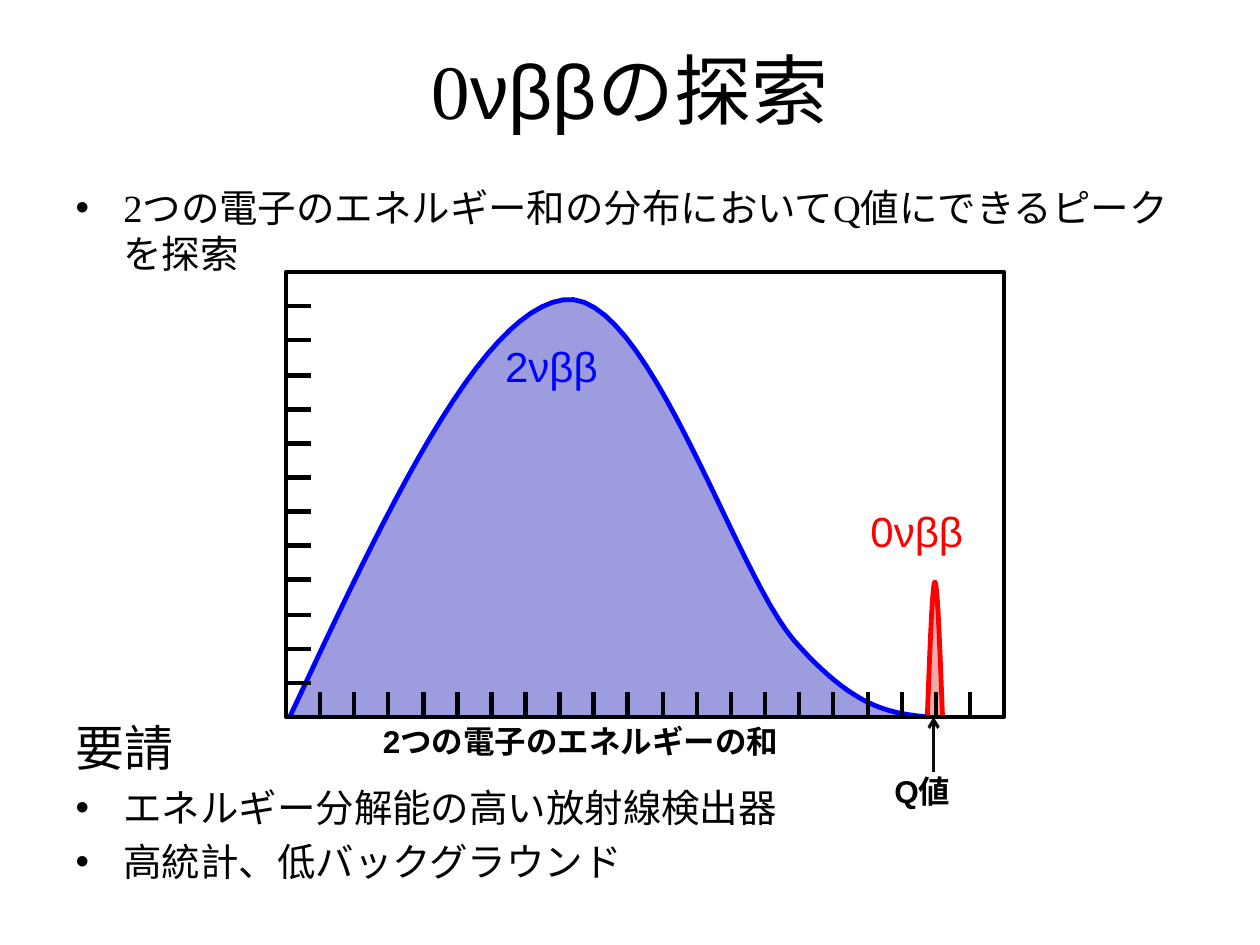
import pptx
import pptx.util
import pptx.dml.color
import pptx.enum.shapes
import pptx.enum.text
import pptx.oxml
import pptx.oxml.ns

PX = 9144  # 100 px to the inch
LEFT, TOP, WIDE, HIGH = 227, 216, 570, 353  # plot frame
BASE = TOP + HIGH
GAP, TICK = 27.15, 20
SERIF, SANS = "Times New Roman", "Arial"
BLACK, BLUE, RED = "000000", "0000FF", "FF0000"


def px(*nums):
    return [pptx.util.Emu(round(n) * PX) for n in nums]


def color(code):
    return pptx.dml.color.RGBColor.from_string(code)


def add_node(parent, tag, **attrs):
    node = pptx.oxml.parse_xml(f"<a:{tag} {pptx.oxml.ns.nsdecls('a')}/>")
    for key, value in attrs.items():
        node.set(key, value)
    parent.append(node)


def set_line(shape, code, width):
    shape.line.color.rgb = color(code)
    shape.line.width = pptx.util.Pt(width)


def add_run(para, text, size, face, code=BLACK, bold=False):
    run = para.add_run()
    run.text = text
    font = run.font
    font.size, font.name, font.bold = pptx.util.Pt(size), face, bold
    font.color.rgb = color(code)


def place(shape, *box):
    shape.left, shape.top, shape.width, shape.height = px(*box)


def fill_title(title):
    place(title, 50, 8, 900, 125)
    frame = title.text_frame
    frame.vertical_anchor = pptx.enum.text.MSO_ANCHOR.MIDDLE
    para = frame.paragraphs[0]
    para.alignment = pptx.enum.text.PP_ALIGN.CENTER
    for text, face in (("0", SERIF), ("νββ", SANS), ("の探索", SERIF)):
        add_run(para, text, 44, face)


def fill_body(body):
    place(body, 50, 141, 900, 552)
    frame = body.text_frame
    frame.auto_size = pptx.enum.text.MSO_AUTO_SIZE.NONE
    items = (
        ("2つの電子のエネルギー和の分布においてQ値にできるピークを探索", 22, 0, True),
        ("要請", 28, 252, False),
        ("エネルギー分解能の高い放射線検出器", 22, 4.4, True),
        ("高統計、低バックグラウンド", 22, 4.4, True),
    )
    for num, (text, size, before, dot) in enumerate(items):
        para = frame.add_paragraph() if num else frame.paragraphs[0]
        para.space_before = pptx.util.Pt(before)
        props = para._p.get_or_add_pPr()
        indent = px(38)[0]
        props.set("marL", str(indent))
        props.set("indent", str(-indent))
        if dot:
            add_node(props, "buFont", typeface=SANS)
            add_node(props, "buChar", char="•")
        else:
            add_node(props, "buNone")
        add_run(para, text, size, SERIF)


def add_label(group, text, box, size, code=BLACK, bold=False):
    label = group.shapes.add_textbox(*px(*box))
    frame = label.text_frame
    frame.word_wrap = True
    add_run(frame.paragraphs[0], text, size, SANS, code, bold)


def add_curve(group, start, arcs, fill, code, steps=24):
    """Draw an open outline through cubic arcs, each given as three points."""
    points, first = [], start
    for arc in arcs:
        ends = (first, *arc)
        for step in range(1, steps + 1):
            t = step / steps
            parts = ((1 - t) ** 3, 3 * t * (1 - t) ** 2, 3 * t * t * (1 - t), t ** 3)
            points.append(tuple(
                round(PX * sum(w * p[axis] for w, p in zip(parts, ends)))
                for axis in (0, 1)))
        first = arc[-1]
    form = group.shapes.build_freeform(start[0] * PX, start[1] * PX)
    form.add_line_segments(points, close=False)
    curve = form.convert_to_shape()
    curve.shadow.inherit = False
    curve.fill.solid()
    curve.fill.fore_color.rgb = color(fill)
    set_line(curve, code, 2.75)


def add_frame(group):
    rect = group.shapes.add_shape(
        pptx.enum.shapes.MSO_SHAPE.RECTANGLE, *px(LEFT, TOP, WIDE, HIGH))
    rect.shadow.inherit = False
    rect.fill.background()
    set_line(rect, BLACK, 2.5)


def add_line(group, ends, code=BLACK, width=2.5, arrow=False):
    line = group.shapes.add_connector(
        pptx.enum.shapes.MSO_CONNECTOR.STRAIGHT, *px(*ends))
    set_line(line, code, width)
    if arrow:
        add_node(line.line._get_or_add_ln(), "tailEnd", type="arrow")
    add_node(line._element.spPr, "effectLst")


def add_plot(slide):
    group = slide.shapes.add_group_shape()
    add_curve(group, (230, BASE), (
        ((305, 409), (380, 248), (447, 238)),
        ((513, 227), (582, 452), (630, 508)),
        ((678, 563), (707, 566), (736, BASE)),
    ), "9C9CDF", BLUE)
    add_curve(group, (736, BASE), (
        ((738, 516), (740, 462), (742, 462)),
        ((744, 462), (746, 515), (748, 568)),
    ), "F1A9A9", RED)
    add_label(group, "2νββ", (391, 265, 115, 62), 24, BLUE)
    add_label(group, "0νββ", (681, 396, 115, 62), 24, RED)
    add_frame(group)
    for num in range(1, 21):
        x = LEFT + num * GAP
        add_line(group, (x, BASE - TICK, x, BASE))
    for num in range(1, 13):
        y = BASE - num * GAP
        add_line(group, (LEFT, y, LEFT + TICK, y))
    add_label(group, "2つの電子のエネルギーの和", (294, 568, 417, 50), 18, bold=True)
    add_line(group, (741, 613, 741, BASE), "0D0D0D", 1.75, arrow=True)
    add_label(group, "Q値", (700, 608, 65, 40), 18, bold=True)


def main():
    deck = pptx.Presentation()
    deck.slide_width, deck.slide_height = px(1000, 750)
    slide = deck.slides.add_slide(deck.slide_layouts[1])
    fill_title(slide.shapes.title)
    fill_body(slide.placeholders[1])
    add_plot(slide)
    deck.save("out.pptx")


if __name__ == "__main__":
    main()
